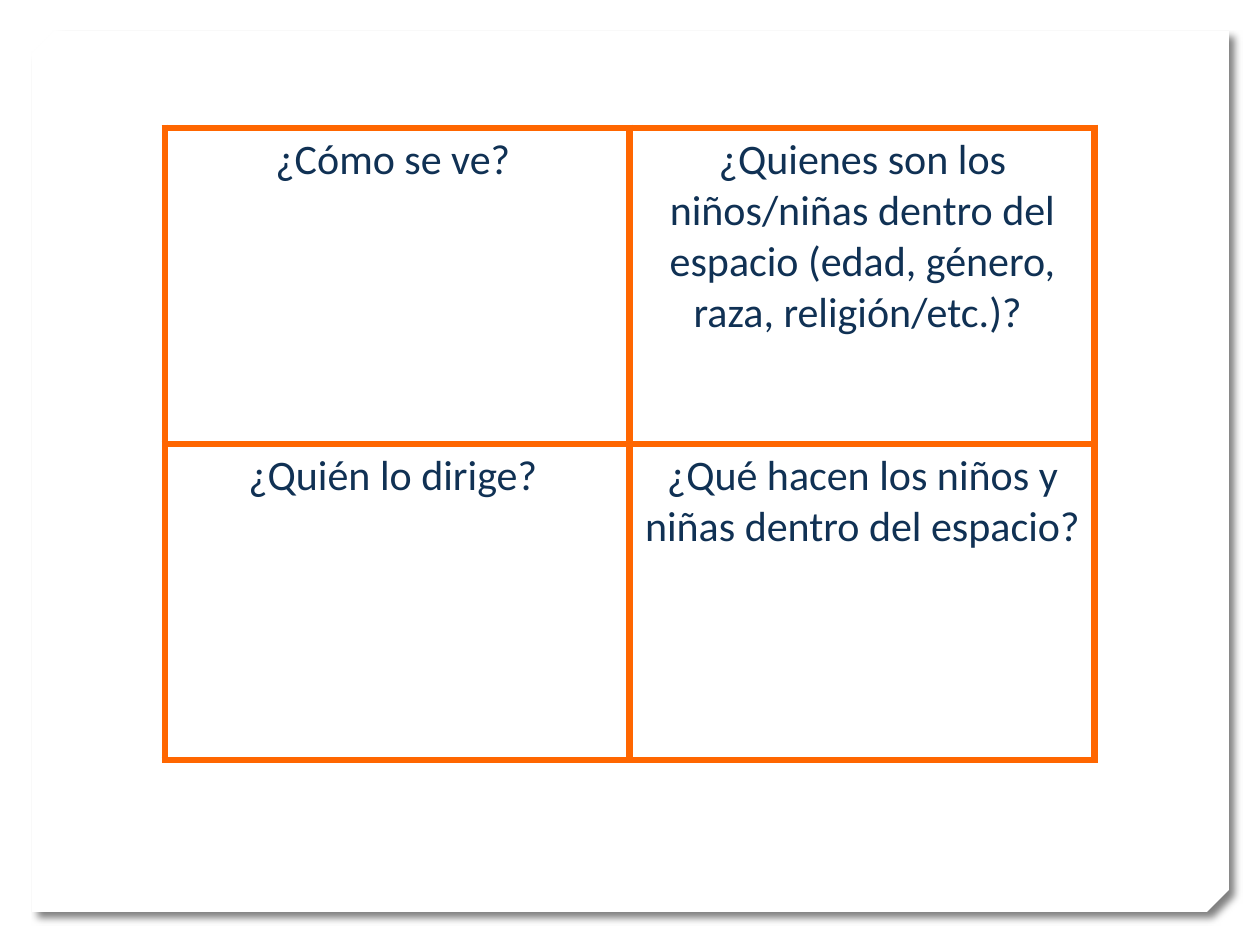
from dataclasses import dataclass

from lxml.etree import SubElement
from pptx import Presentation
from pptx.dml.color import RGBColor as RGB
from pptx.enum.shapes import MSO_SHAPE as Shape
from pptx.enum.text import PP_ALIGN as Align
from pptx.oxml import parse_xml
from pptx.oxml.ns import nsdecls, qn
from pptx.util import Pt

PX = 914400 // 126  # EMU per px


@dataclass(frozen=True)
class Theme:
    paper: str = "FFFFFF"
    ink: str = "103154"
    border: str = "FF6600"
    font: str = "Calibri"
    text_size: int = 24
    border_width: float = 4.5


theme = Theme()


def add_borders(cell):
    props = cell._tc.get_or_add_tcPr()
    for position, side in enumerate(("lnL", "lnR", "lnT", "lnB")):
        line = SubElement(props, qn(f"a:{side}"), w=str(Pt(theme.border_width)))
        fill = SubElement(line, qn("a:solidFill"))
        SubElement(fill, qn("a:srgbClr"), val=theme.border)
        props.insert(position, line)  # borders come before the fill


prs = Presentation()
prs.slide_width, prs.slide_height = 1260 * PX, 945 * PX
slide = prs.slides.add_slide(prs.slide_layouts[6])

# Sheet of paper with two snipped corners and a soft shadow
sheet = slide.shapes.add_shape(Shape.SNIP_2_DIAG_RECTANGLE,
                               32 * PX, 31 * PX, 1197 * PX, 881 * PX)
sheet.adjustments[0], sheet.adjustments[1] = 0.025, 0
sheet.fill.solid()
sheet.fill.fore_color.rgb = RGB.from_string(theme.paper)
sheet.line.fill.background()
sheet._element.spPr.append(parse_xml(
    f'<a:effectLst {nsdecls("a")}>'
    f'<a:outerShdw blurRad="{Pt(4)}" dist="{Pt(5)}" dir="2700000" algn="tl" rotWithShape="0">'
    '<a:srgbClr val="000000"><a:alpha val="50000"/></a:srgbClr>'
    '</a:outerShdw></a:effectLst>'))

# Two-by-two grid of questions
questions = [
    ["¿Cómo se ve? ",
     "¿Quienes son los niños/niñas dentro del espacio (edad, género, raza, religión/etc.)? "],
    ["¿Quién lo dirige? ",
     "¿Qué hacen los niños y niñas dentro del espacio?"],
]
column_width, row_height = 465 * PX, 316 * PX
grid = slide.shapes.add_table(2, 2, 165 * PX, 128 * PX,
                              2 * column_width, 2 * row_height).table
grid.first_row = grid.horz_banding = False
for column in grid.columns:
    column.width = column_width

for row, row_questions in zip(grid.rows, questions):
    row.height = row_height
    for cell, question in zip(row.cells, row_questions):
        cell.fill.background()
        add_borders(cell)
        cell.text_frame.text = question
        paragraph = cell.text_frame.paragraphs[0]
        paragraph.alignment = Align.CENTER
        font = paragraph.runs[0].font
        font.name, font.size = theme.font, Pt(theme.text_size)
        font.color.rgb = RGB.from_string(theme.ink)

prs.save("out.pptx")
